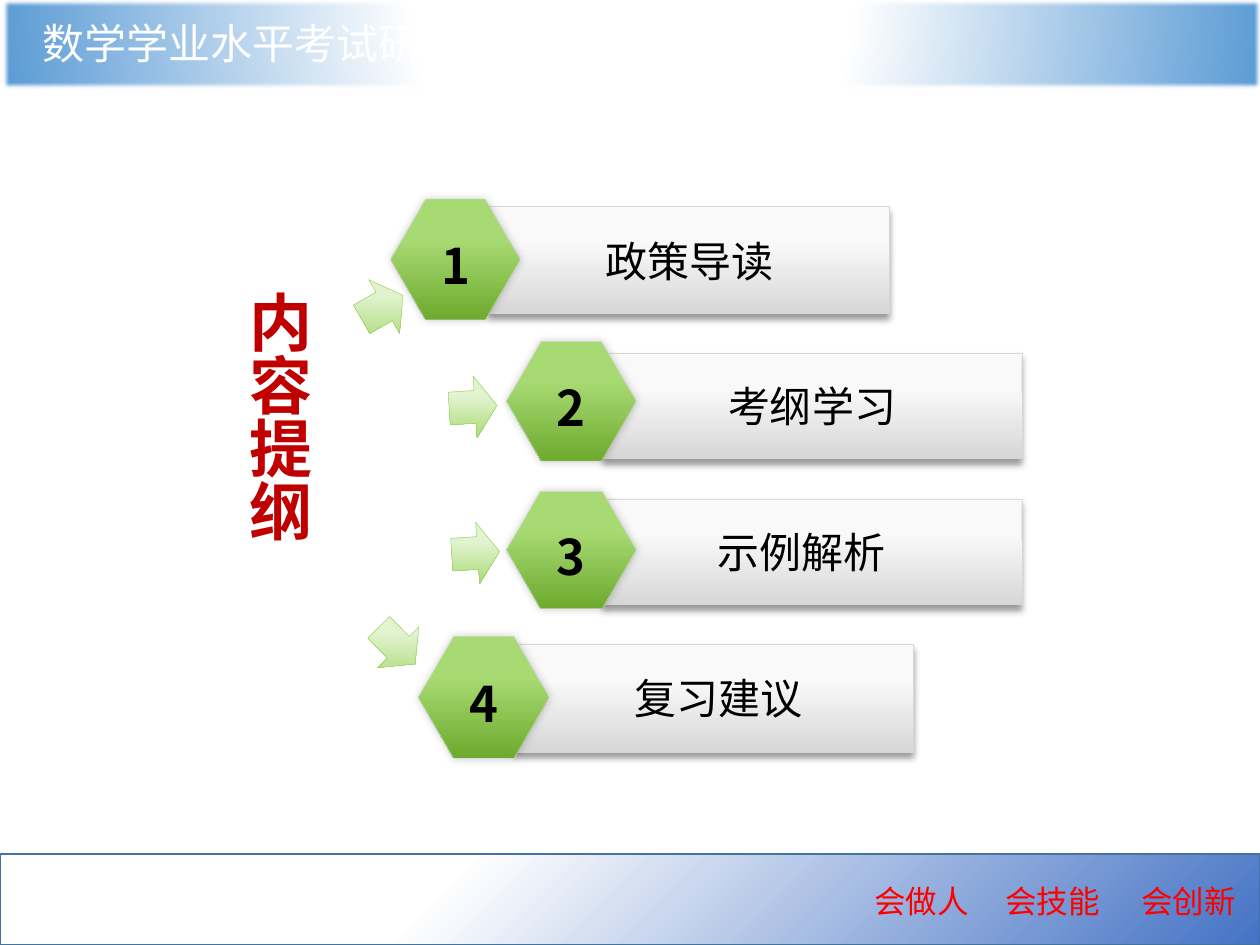
from lxml import etree
from pptx import Presentation
from pptx.dml.color import RGBColor
from pptx.enum.shapes import MSO_SHAPE
from pptx.enum.text import MSO_ANCHOR, PP_ALIGN
from pptx.oxml import parse_xml
from pptx.oxml.ns import nsdecls, qn
from pptx.util import Inches, Pt

RECTANGLE = MSO_SHAPE.RECTANGLE
HEXAGON = MSO_SHAPE.HEXAGON
UP_ARROW = MSO_SHAPE.UP_ARROW
MIDDLE = MSO_ANCHOR.MIDDLE
TOP = MSO_ANCHOR.TOP
CENTER = PP_ALIGN.CENTER
LEFT = PP_ALIGN.LEFT

DOWNWARD = '<a:lin ang="5400000" scaled="0"/>'
THEME = {
    "font": "Noto Sans CJK SC",
    "footer_font": "Noto Sans CJK JP",
    "title_size": 24,
    "footer_size": 18,
    "outline_size": 36,
    "number_size": 28,
    "title": "FFFFFF",
    "motto": "FF0000",
    "outline": "C00000",
    "text": "000000",
    "footer_line": ("43739E", 1),
    "grey_line": ("D7D7D7", 0.25),
    "arrow_line": ("92D050", 0.25),
    "header_stops": [(0, "FFFFFF"), (35, "FFFFFF"), (100, "5B9BD5")],
    "footer_stops": [(0, "FFFFFF"), (35, "FFFFFF"), (100, "4472C4")],
    "arrow_stops": [(0, "E2F3D0"), (33, "E2F3D0"), (100, "A8DA73")],
    "bar_stops": [(33, "F9F9F9"), (100, "D7D7D7")],
    "hexagon_stops": [(33, "A8DA73"), (100, "6DAA2D")],
    "footer_shadow": (38, 4, 4, 90),
    "bar_shadow": (40, 4, 3, 90),
    "hexagon_shadow": (20, 5, 0, 0),
    "text_shadow": (45, 4, 4, 45),
}
SHADOW = (
    f'<a:effectLst {nsdecls("a")}><a:outerShdw blurRad="{{1}}" dist="{{2}}" dir="{{3}}" '
    'algn="ctr" rotWithShape="0"><a:srgbClr val="000000"><a:alpha val="{0}"/>'
    '</a:srgbClr></a:outerShdw></a:effectLst>'
)
SHADOW_UNITS = (1000, 12700, 12700, 60000)

presentation = Presentation()
presentation.slide_width = Inches(10)
presentation.slide_height = Inches(7.5)
slide = presentation.slides.add_slide(presentation.slide_layouts[6])
column = presentation.slide_width / 100
row = presentation.slide_height / 75


def add_panel(kind, box, stops, direction, line=None, shadow=None):
    left, top, width, height = box
    shape = slide.shapes.add_shape(
        kind, round(left * column), round(top * row), round(width * column), round(height * row))
    shape.shadow.inherit = False
    if line:
        shape.line.color.rgb = RGBColor.from_string(line[0])
        shape.line.width = Pt(line[1])
    else:
        shape.line.fill.background()
    colors = "".join(
        f'<a:gs pos="{share * 1000}"><a:srgbClr val="{color}"/></a:gs>' for share, color in stops)
    properties = shape._element.spPr
    properties.find(qn("a:prstGeom")).addnext(parse_xml(
        f'<a:gradFill {nsdecls("a")} rotWithShape="0"><a:gsLst>{colors}</a:gsLst>'
        f'{direction}</a:gradFill>'))
    if shadow:
        values = [value * unit for value, unit in zip(shadow, SHADOW_UNITS)]
        properties.replace(properties.find(qn("a:effectLst")), parse_xml(SHADOW.format(*values)))
    return shape


def write(shape, text, size, color, bold=False, font=THEME["font"], align=CENTER,
          anchor=MIDDLE, wrap=True, shadow=None):
    frame = shape.text_frame
    frame.word_wrap = wrap
    frame.vertical_anchor = anchor
    paragraph = frame.paragraphs[0]
    paragraph.alignment = align
    run = paragraph.add_run()
    run.text = text
    run.font.size = Pt(size)
    run.font.bold = bold
    run.font.color.rgb = RGBColor.from_string(color)
    run.font.name = font
    latin = run._r.rPr.find(qn("a:latin"))
    east_asian = etree.Element(qn("a:ea"), typeface=font)
    latin.addnext(east_asian)
    if shadow:
        values = [value * unit for value, unit in zip(shadow, SHADOW_UNITS)]
        latin.addprevious(parse_xml(SHADOW.format(*values)))
    return paragraph


add_panel(
    RECTANGLE, (0, 67.8, 100, 7.2), THEME["footer_stops"],
    '<a:path path="circle"><a:fillToRect r="100000" b="100000"/></a:path>',
    THEME["footer_line"], THEME["footer_shadow"])
motto = slide.shapes.add_textbox(
    round(68.4 * column), round(69.5 * row), round(34.5 * column), round(4 * row))
motto_paragraph = motto.text_frame.paragraphs[0]
tabs = etree.SubElement(motto_paragraph._p.get_or_add_pPr(), qn("a:tabLst"))
for stop in (10.4, 21.2):
    etree.SubElement(tabs, qn("a:tab"), pos=str(round(stop * column)), algn="l")
write(motto, "会做人\t会技能\t会创新", THEME["footer_size"], THEME["motto"],
      font=THEME["footer_font"], align=LEFT, anchor=TOP, wrap=False,
      shadow=THEME["text_shadow"])

header = add_panel(
    RECTANGLE, (0.1, -0.1, 100, 7.2), THEME["header_stops"],
    '<a:path path="circle"><a:fillToRect l="50000" t="-80000" r="50000" b="180000"/></a:path>')
etree.SubElement(header._element.spPr.find(qn("a:effectLst")), qn("a:softEdge"), rad="31750")
title = slide.shapes.add_textbox(
    round(2.4 * column), round(0.9 * row), round(36 * column), round(5 * row))
write(title, "数学学业水平考试研究", THEME["title_size"], THEME["title"],
      align=LEFT, anchor=TOP, wrap=False, shadow=THEME["text_shadow"])

outline = slide.shapes.add_textbox(
    round(17.6 * column), round(22.1 * row), round(8 * column), round(29.5 * row))
outline.text_frame._txBody.bodyPr.set("vert", "eaVert")
write(outline, "内容提纲", THEME["outline_size"], THEME["outline"], bold=True, anchor=TOP)

arrows = [
    ((27.9, 22.5, 4.9, 3.8), 60),
    ((35.1, 30.4, 4.9, 3.8), 86.3),
    ((35.3, 42, 4.9, 3.8), 86.3),
    ((29.2, 49.2, 4.6, 4.1), 135.1),
]
for box, angle in arrows:
    arrow = add_panel(UP_ARROW, box, THEME["arrow_stops"], DOWNWARD, THEME["arrow_line"])
    arrow.rotation = angle
    arrow.adjustments[0] = 0.53
    arrow.adjustments[1] = 0.46

topics = [
    ("政策导读", (38.8, 16.4, 31.8, 8.5), (31, 15.8, 10.3, 9.6), 1, 1),
    ("考纲学习", (47.8, 28, 33.3, 8.4), (40.2, 27.1, 10.3, 9.5), 1, 1),
    ("示例解析", (47.8, 39.6, 33.3, 8.4), (40.2, 39, 10.3, 9.3), 1, 2.6),
    ("复习建议", (40.8, 51.1, 31.7, 8.6), (33.2, 50.5, 10.4, 9.7), 1.7, 1),
]
for number, (topic, bar_box, hexagon_box, left_inset, right_inset) in enumerate(topics, 1):
    bar = add_panel(RECTANGLE, bar_box, THEME["bar_stops"], DOWNWARD,
                    THEME["grey_line"], THEME["bar_shadow"])
    bar.text_frame.margin_left = round(left_inset * column)
    bar.text_frame.margin_right = round(right_inset * column)
    write(bar, topic, THEME["title_size"], THEME["text"])

    hexagon = add_panel(HEXAGON, hexagon_box, THEME["hexagon_stops"], DOWNWARD,
                        THEME["grey_line"], THEME["hexagon_shadow"])
    hexagon.adjustments[0] = 0.29
    paragraph = write(hexagon, str(number), THEME["number_size"], THEME["text"], bold=True)
    paragraph.line_spacing = 1.2

presentation.save("out.pptx")
